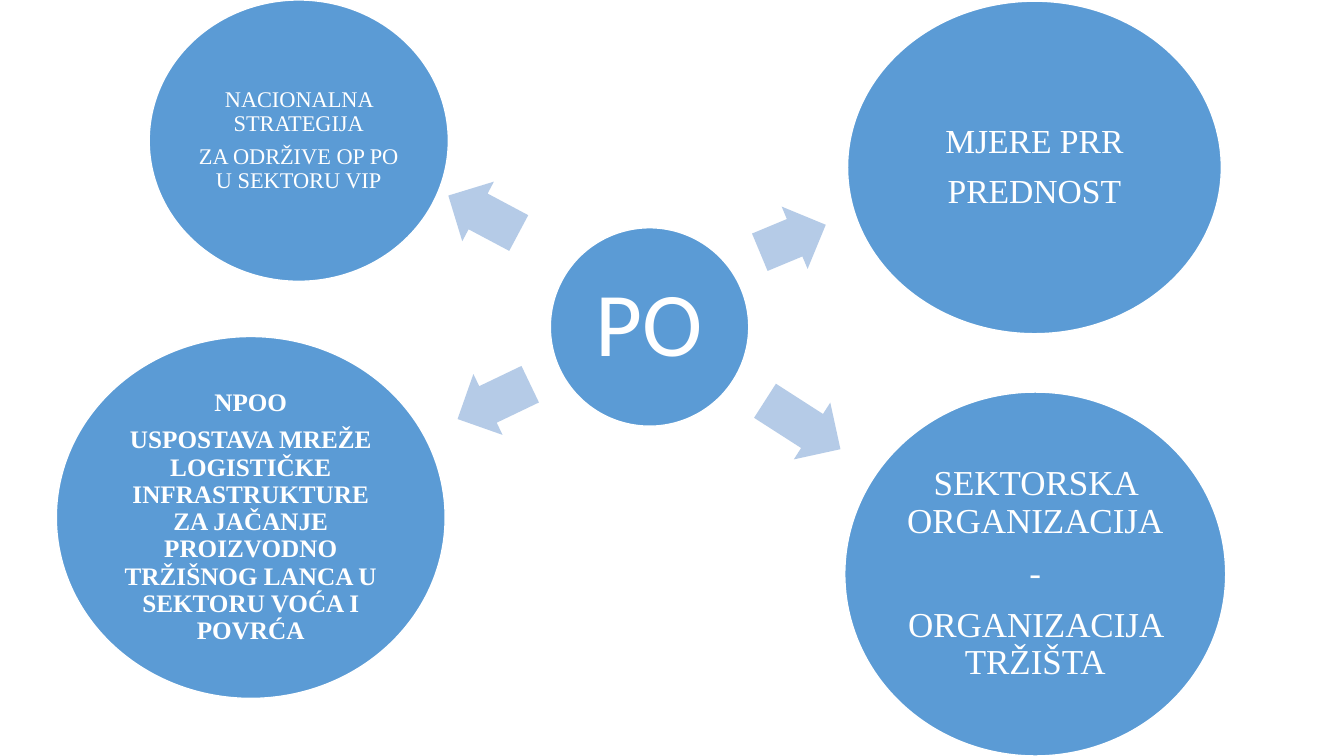
from pptx import Presentation
from pptx.dml.color import RGBColor
from pptx.enum.shapes import MSO_SHAPE
from pptx.enum.text import MSO_ANCHOR, PP_ALIGN
from pptx.util import Cm, Pt

COLORS = {"circle": "5B9BD5", "arrow": "B5CBE7", "white": "FFFFFF"}
SERIF = "Times New Roman"

# Circles: left, top, width, height in cm, paragraphs, text format
CIRCLES = [
    (13.87, 5.74, 5, 5, ["PO"], {"size": 65, "font": "Calibri"}),
    (3.76, 0, 7.54, 7.09,
     ["NACIONALNA STRATEGIJA", "ZA ODRŽIVE OP PO U SEKTORU VIP"], {"size": 16}),
    (21.36, 0.03, 9.42, 8.38, ["MJERE PRR", "PREDNOST"], {"size": 24}),
    (21.29, 9.88, 9.6, 9.17,
     ["SEKTORSKA ORGANIZACIJA", "-", "ORGANIZACIJA TRŽIŠTA"], {"size": 25}),
    (1.42, 8.48, 9.8, 9.12,
     ["NPOO",
      "USPOSTAVA MREŽE LOGISTIČKE INFRASTRUKTURE ZA JAČANJE PROIZVODNO "
      "TRŽIŠNOG LANCA U SEKTORU VOĆA I POVRĆA"], {"size": 18, "bold": True}),
]

# Arrows: left, top, length in cm, rotation in degrees
ARROWS = [
    (11.18, 4.55, 2.01, 208),
    (19.08, 5.16, 1.8, 337.4),
    (19.1, 9.86, 2.26, 32.7),
    (11.43, 9.27, 2.03, 154.4),
]
ARROW_HEIGHT = 1.7
INSET_PER_POINT = 0.0035  # cm of text margin per point of text size
SPACE_AFTER = 0.4         # share of text size


def color(name):
    return RGBColor.from_string(COLORS[name])


def add_filled(slide, preset, left, top, width, height, fill):
    shape = slide.shapes.add_shape(preset, Cm(left), Cm(top), Cm(width), Cm(height))
    shape.shadow.inherit = False
    shape.fill.solid()
    shape.fill.fore_color.rgb = color(fill)
    return shape


def write_text(shape, lines, size, font=SERIF, bold=False):
    frame = shape.text_frame
    frame.word_wrap = True
    frame.vertical_anchor = MSO_ANCHOR.MIDDLE
    inset = Cm(size * INSET_PER_POINT)
    frame.margin_left = frame.margin_right = inset
    frame.margin_top = frame.margin_bottom = inset
    frame.text = "\n".join(lines)
    for paragraph in frame.paragraphs:
        paragraph.alignment = PP_ALIGN.CENTER
        paragraph.line_spacing = 0.9
        paragraph.space_after = Pt(size * SPACE_AFTER)
        text_font = paragraph.runs[0].font
        text_font.name = font
        text_font.size = Pt(size)
        text_font.bold = bold
        text_font.color.rgb = color("white")


def main():
    presentation = Presentation()
    presentation.slide_width, presentation.slide_height = Cm(33.87), Cm(19.05)
    slide = presentation.slides.add_slide(presentation.slide_layouts[6])

    # Arrows from the hub outwards
    for left, top, length, rotation in ARROWS:
        arrow = add_filled(slide, MSO_SHAPE.RIGHT_ARROW, left, top,
                           length, ARROW_HEIGHT, "arrow")
        arrow.line.fill.background()
        arrow.adjustments[0], arrow.adjustments[1] = 0.6, 0.5
        arrow.rotation = rotation

    # Hub and the four circles around it
    for left, top, width, height, lines, text_format in CIRCLES:
        circle = add_filled(slide, MSO_SHAPE.OVAL, left, top, width, height, "circle")
        circle.line.color.rgb = color("white")
        circle.line.width = Pt(1)
        write_text(circle, lines, **text_format)

    presentation.save("out.pptx")


if __name__ == "__main__":
    main()
